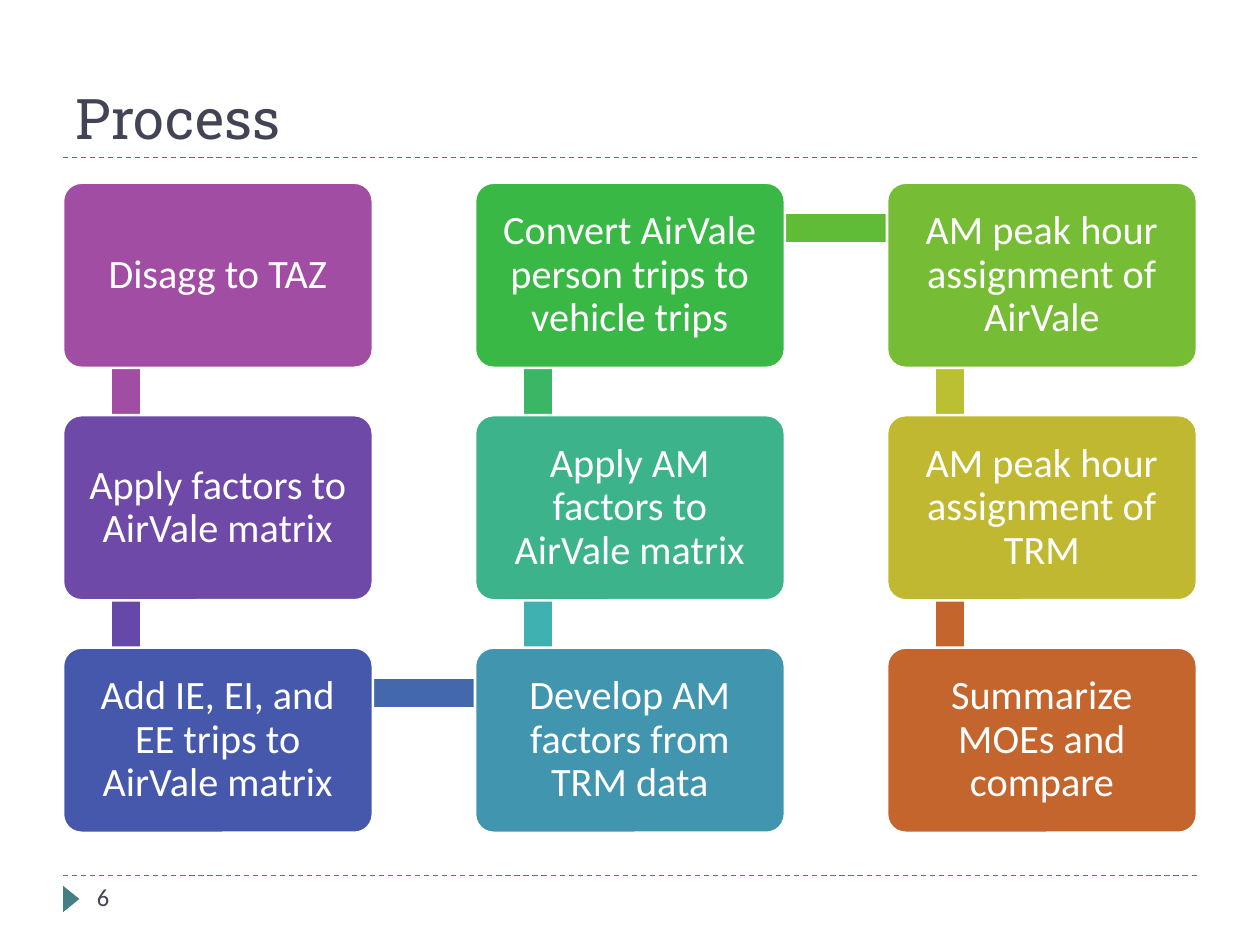
from dataclasses import dataclass

from lxml import etree
from pptx import Presentation
from pptx.dml.color import RGBColor
from pptx.enum.dml import MSO_LINE
from pptx.enum.shapes import MSO_CONNECTOR, MSO_SHAPE
from pptx.enum.text import MSO_ANCHOR, PP_ALIGN
from pptx.oxml.ns import qn
from pptx.util import Inches, Pt

RECT = MSO_SHAPE.RECTANGLE
ROUND = MSO_SHAPE.ROUNDED_RECTANGLE
TRI = MSO_SHAPE.ISOSCELES_TRIANGLE
LINE = MSO_CONNECTOR.STRAIGHT
DASH = MSO_LINE.DASH
MID, LOW = MSO_ANCHOR.MIDDLE, MSO_ANCHOR.BOTTOM
LEFT, MIDDLE = PP_ALIGN.LEFT, PP_ALIGN.CENTER

ROWS = 3
X, Y = 0.5, 1.45
STEP_X, STEP_Y = 3.27, 1.845
BOX_W, BOX_H = 2.46, 1.47
HUB_X, HUB_Y = 0.5, 0.36
BAR = 0.22
PAD = 0.14
INK, TEAL, WHITE = "424456", "438086", "FFFFFF"


@dataclass
class Step:
    text: str
    fill: str
    link: str = ""


STEPS = [
    Step("Disagg to TAZ", "A04DA3", "A04DA3"),
    Step("Apply factors to AirVale matrix", "6E49A7", "6648A8"),
    Step("Add IE, EI, and EE trips to AirVale matrix", "4558AB", "4468AC"),
    Step("Develop AM factors from TRM data", "4195AF", "3FB1B1"),
    Step("Apply AM factors to AirVale matrix", "3DB38C", "3BB665"),
    Step("Convert AirVale person trips to vehicle trips", "39B845", "60BB36"),
    Step("AM peak hour assignment of AirVale", "76BC35", "BBBF32"),
    Step("AM peak hour assignment of TRM", "C0B831", "C4652D"),
    Step("Summarize MOEs and compare", "C4652D"),
]


def color(code: str) -> RGBColor:
    return RGBColor.from_string(code)


def style(par, size: float, code: str, face: str, align=LEFT) -> None:
    par.font.size = Pt(size)
    par.font.name = face
    par.font.color.rgb = color(code)
    par.alignment = align


def place(index: int) -> tuple[float, float]:
    col, row = divmod(index, ROWS)
    if col % 2:
        row = ROWS - 1 - row
    return X + col * STEP_X, Y + row * STEP_Y


def shape(slide, kind, x: float, y: float, w: float, h: float, fill: str):
    item = slide.shapes.add_shape(kind, Inches(x), Inches(y), Inches(w), Inches(h))
    item.shadow.inherit = False
    item.fill.solid()
    item.fill.fore_color.rgb = color(fill)
    item.line.fill.background()
    return item


def rule(slide, y: float) -> None:
    line = slide.shapes.add_connector(LINE, Inches(0.5), Inches(y), Inches(9.5), Inches(y))
    line.line.color.rgb = color(TEAL)
    line.line.width = Pt(0.75)
    line.line.dash_style = DASH
    etree.SubElement(line._element.spPr, qn("a:effectLst"))


def link(slide, index: int) -> None:
    (x1, y1), (x2, y2) = place(index), place(index + 1)
    w, h = abs(x2 - x1) or BAR, abs(y2 - y1) or BAR
    x, y = min(x1, x2) + HUB_X, min(y1, y2) + HUB_Y
    if x1 == x2:
        x -= BAR / 2
    else:
        y -= BAR / 2
    shape(slide, RECT, x, y, w, h, STEPS[index].link)


def box(slide, index: int) -> None:
    step = STEPS[index]
    card = shape(slide, ROUND, *place(index), BOX_W, BOX_H, step.fill)
    card.adjustments[0] = 0.1
    card.line.color.rgb = color(WHITE)
    card.line.width = Pt(1.5)
    frame = card.text_frame
    frame.word_wrap = True
    frame.vertical_anchor = MID
    frame.margin_left = frame.margin_right = Inches(PAD)
    frame.margin_top = frame.margin_bottom = Inches(PAD)
    frame.text = step.text
    par = frame.paragraphs[0]
    par.line_spacing = 0.9
    style(par, 23, WHITE, "Calibri", MIDDLE)


def head(slide) -> None:
    title = slide.shapes.title
    title.left, title.top = Inches(0.5), Inches(0.17)
    title.width, title.height = Inches(9), Inches(1.08)
    title.text_frame.text = "Process"
    title.text_frame.vertical_anchor = LOW
    style(title.text_frame.paragraphs[0], 32, INK, "Roboto Slab")


def foot(slide) -> None:
    mark = shape(slide, TRI, 0.46, 7.07, 0.21, 0.13, TEAL)
    mark.rotation = 90
    note = slide.shapes.add_textbox(Inches(0.67), Inches(6.95), Inches(2.17), Inches(0.4))
    note.text_frame.word_wrap = True
    note.text_frame.text = "6"
    style(note.text_frame.paragraphs[0], 14, INK, "Calibri")


def main() -> None:
    deck = Presentation()
    deck.slide_width, deck.slide_height = Inches(10), Inches(7.5)
    slide = deck.slides.add_slide(deck.slide_layouts[5])
    for y in (6.95, 1.25):
        rule(slide, y)
    head(slide)
    foot(slide)
    for index, step in enumerate(STEPS):
        if step.link:
            link(slide, index)
        box(slide, index)
    deck.save("out.pptx")


if __name__ == "__main__":
    main()
